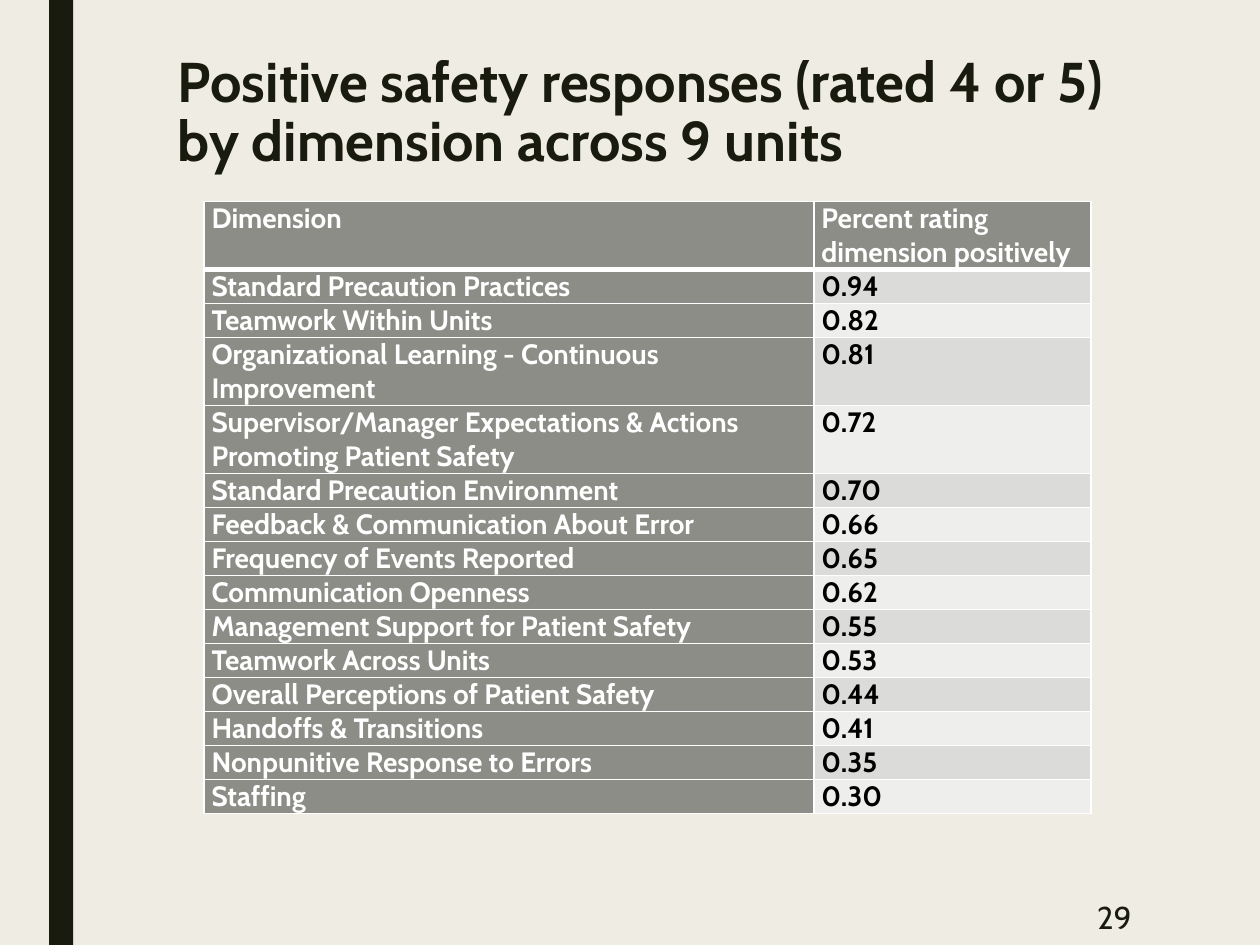
from lxml.etree import SubElement
from pptx import Presentation
from pptx.dml.color import RGBColor
from pptx.enum.shapes import MSO_SHAPE
from pptx.enum.text import MSO_ANCHOR, MSO_AUTO_SIZE, PP_ALIGN
from pptx.oxml.ns import qn
from pptx.util import Inches, Pt

FONT = "Cabin"
COLORS = {
    "paper": "EFEDE3",
    "ink": "191B0E",
    "label": "8C8D86",
    "odd": "DBDBD9",
    "even": "EEEEED",
    "white": "FFFFFF",
    "black": "000000",
}
RESPONSES = [
    ("Dimension", "Percent rating dimension positively"),
    ("Standard Precaution Practices", "0.94"),
    ("Teamwork Within Units", "0.82"),
    ("Organizational Learning - Continuous Improvement", "0.81"),
    ("Supervisor/Manager Expectations & Actions Promoting Patient Safety", "0.72"),
    ("Standard Precaution Environment", "0.70"),
    ("Feedback & Communication About Error", "0.66"),
    ("Frequency of Events Reported", "0.65"),
    ("Communication Openness", "0.62"),
    ("Management Support for Patient Safety", "0.55"),
    ("Teamwork Across Units", "0.53"),
    ("Overall Perceptions of Patient Safety", "0.44"),
    ("Handoffs & Transitions", "0.41"),
    ("Nonpunitive Response to Errors", "0.35"),
    ("Staffing", "0.30"),
]
TWO_LINE_ROWS = {0, 3, 4}


def rgb(name):
    return RGBColor.from_string(COLORS[name])


def format_text(frame, size, color, bold=False):
    for paragraph in frame.paragraphs:
        for run in paragraph.runs:
            run.font.name = FONT
            run.font.size = Pt(size)
            run.font.bold = bold
            run.font.color.rgb = rgb(color)


def add_side_bar(slide, left, top, width, height):
    bar = slide.shapes.add_shape(MSO_SHAPE.RECTANGLE, left, top, width, height)
    bar.shadow.inherit = False
    bar.fill.solid()
    bar.fill.fore_color.rgb = rgb("ink")
    bar.line.fill.background()


def place_title(slide, left, top, width, height):
    title = slide.shapes.title
    title.left, title.top, title.width, title.height = left, top, width, height
    frame = title.text_frame
    frame.text = "Positive safety responses (rated 4 or 5) by dimension across 9 units"
    frame.word_wrap = True
    frame.auto_size = MSO_AUTO_SIZE.NONE
    frame.vertical_anchor = MSO_ANCHOR.TOP
    frame.paragraphs[0].alignment = PP_ALIGN.LEFT
    frame.paragraphs[0].line_spacing = 0.89
    format_text(frame, 32, "ink", bold=True)


def set_borders(cell, top, bottom):
    properties = cell._tc.get_or_add_tcPr()
    for side, points in (("L", 1), ("R", 1), ("T", top), ("B", bottom)):
        edge = SubElement(properties, qn(f"a:ln{side}"), w=str(Pt(points)))
        fill = SubElement(edge, qn("a:solidFill"))
        SubElement(fill, qn("a:srgbClr"), val=COLORS["white"])


def fill_cell(cell, text, row, column):
    is_label = row == 0 or column == 0
    set_borders(cell, top=3 if row == 1 else 1, bottom=3 if row == 0 else 1)
    cell.fill.solid()
    cell.fill.fore_color.rgb = rgb("label" if is_label else "odd" if row % 2 else "even")
    cell.margin_left = cell.margin_right = Inches(0.06)
    cell.margin_top = cell.margin_bottom = 0
    cell.text_frame.text = text
    format_text(cell.text_frame, 16, "white" if is_label else "black", bold=True)


def add_response_table(slide, left, top, width, line_height):
    line_count = len(RESPONSES) + len(TWO_LINE_ROWS)
    table = slide.shapes.add_table(
        len(RESPONSES), 2, left, top, width, line_height * line_count
    ).table
    rating_width = Inches(2.2)
    table.columns[0].width = width - rating_width
    table.columns[1].width = rating_width
    for row, response in enumerate(RESPONSES):
        table.rows[row].height = line_height * (2 if row in TWO_LINE_ROWS else 1)
        for column, text in enumerate(response):
            fill_cell(table.cell(row, column), text, row, column)


def add_page_number(slide, left, top, width, height):
    frame = slide.shapes.add_textbox(left, top, width, height).text_frame
    frame.text = "29"
    frame.word_wrap = True
    frame.vertical_anchor = MSO_ANCHOR.MIDDLE
    frame.paragraphs[0].alignment = PP_ALIGN.RIGHT
    format_text(frame, 18, "ink")


def main():
    deck = Presentation()
    deck.slide_width, deck.slide_height = Inches(10), Inches(7.5)
    slide = deck.slides.add_slide(deck.slide_layouts[5])
    slide.background.fill.solid()
    slide.background.fill.fore_color.rgb = rgb("paper")
    add_side_bar(slide, Inches(0.39), 0, Inches(0.19), deck.slide_height)
    place_title(slide, Inches(1.31), Inches(0.38), Inches(7.68), Inches(0.63))
    add_response_table(slide, Inches(1.62), Inches(1.6), Inches(7.04), Inches(0.27))
    add_page_number(slide, Inches(7.77), Inches(7.06), Inches(1.31), Inches(0.44))
    deck.save("out.pptx")


if __name__ == "__main__":
    main()
